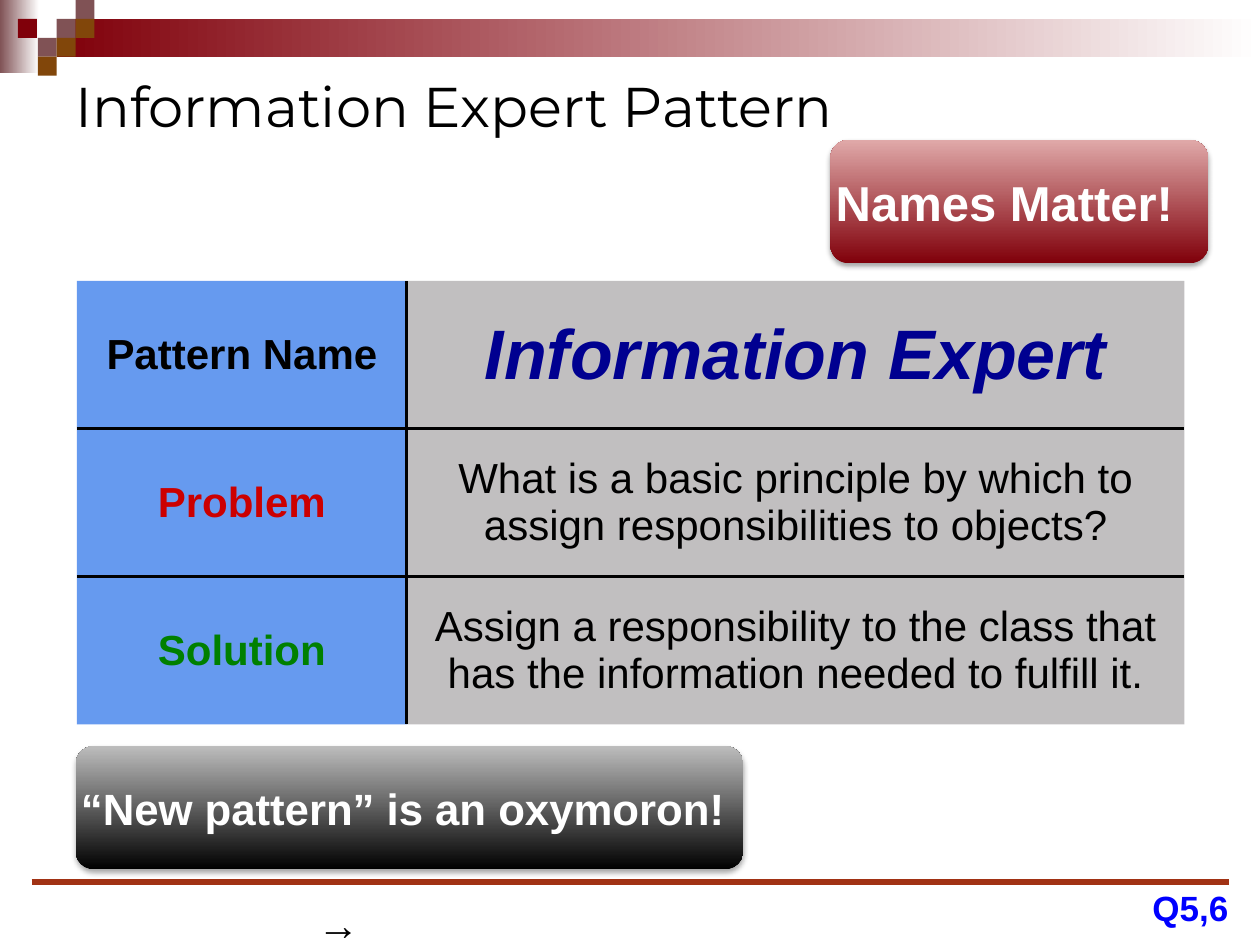
import pptx
import pptx.util
import pptx.dml.color
import pptx.enum.shapes
import pptx.enum.text
import pptx.oxml
import pptx.oxml.ns

ANCHOR = pptx.enum.text.MSO_ANCHOR
ALIGN = pptx.enum.text.PP_ALIGN
SHAPE = pptx.enum.shapes.MSO_SHAPE
NO_STYLE = "{2D5ABB26-0587-4C30-8999-92F81FD0307C}"
MAROON, MAUVE, BROWN = "80000A", "805255", "81460A"


def rgb(value):
    return pptx.dml.color.RGBColor.from_string(value)


def element(markup):
    head, tail = markup.split(">", 1)
    closing = "/" if head.endswith("/") else ""
    names = pptx.oxml.ns.nsdecls("a")
    return pptx.oxml.parse_xml(f"{head.rstrip('/')} {names}{closing}>{tail}")


class Page:
    columns, rows = 100, 75
    font = "Arial"

    def __init__(self, deck):
        self.deck = deck
        self.slide = deck.slides.add_slide(deck.slide_layouts[6])
        self.shapes = self.slide.shapes

    def place(self, left, top, width, height):
        across = self.deck.slide_width / self.columns
        down = self.deck.slide_height / self.rows
        return [pptx.util.Emu(round(value)) for value in
                (left * across, top * down, width * across, height * down)]

    def letter(self, frame, text, size, color="000000", bold=False, italic=False,
               align=ALIGN.LEFT, font=None):
        para = frame.paragraphs[0]
        para.text = text
        para.alignment = align
        para.font.name = font or self.font
        para.font.size = pptx.util.Pt(size)
        para.font.bold = bold
        para.font.italic = italic
        para.font.color.rgb = rgb(color)

    def block(self, area, *colors, angle=0, kind=SHAPE.RECTANGLE):
        box = self.shapes.add_shape(kind, *self.place(*area))
        box.shadow.inherit = False
        box.line.fill.background()
        if len(colors) == 1:
            box.fill.solid()
            box.fill.fore_color.rgb = rgb(colors[0])
        else:
            box.fill.gradient()
            box.fill.gradient_angle = angle
            for position, (stop, color) in enumerate(zip(box.fill.gradient_stops, colors)):
                stop.position = position
                stop.color.rgb = rgb(color)
        return box

    def callout(self, area, text, size, dark, light):
        box = self.block(area, dark, light, angle=90, kind=SHAPE.ROUNDED_RECTANGLE)
        box.adjustments[0] = 0.15
        box._element.spPr.find(pptx.oxml.ns.qn("a:effectLst")).append(element(
            f'<a:outerShdw blurRad="{pptx.util.Pt(3.1)}" dist="{pptx.util.Pt(1.8)}" '
            'dir="5400000" rotWithShape="0"><a:srgbClr val="000000">'
            '<a:alpha val="35000"/></a:srgbClr></a:outerShdw>'))
        self.fit(box.text_frame, 0, 0)
        self.letter(box.text_frame, text, size, "FFFFFF", bold=True)

    def fit(self, frame, side, edge, wrap=True):
        frame.word_wrap = wrap
        frame.margin_left = frame.margin_right = pptx.util.Inches(side)
        frame.margin_top = frame.margin_bottom = pptx.util.Inches(edge)
        frame.vertical_anchor = ANCHOR.MIDDLE

    def text(self, area, text, size, side=0.1, edge=0.05, wrap=True, **style):
        box = self.shapes.add_textbox(*self.place(*area))
        self.fit(box.text_frame, side, edge, wrap)
        self.letter(box.text_frame, text, size, **style)

    def rule(self, left, right, row, color, weight):
        x, y, width, _ = self.place(left, row, right - left, 0)
        line = self.shapes.add_connector(
            pptx.enum.shapes.MSO_CONNECTOR.STRAIGHT, x, y, x + width, y)
        line.line.color.rgb = rgb(color)
        line.line.width = pptx.util.Pt(weight)
        line._element.spPr.append(element("<a:effectLst/>"))

    def table(self, area, widths, fills, entries):
        frame = self.shapes.add_table(len(entries), len(widths), *self.place(*area))
        table = frame.table
        table.first_row = table.horz_banding = False
        table._tbl.tblPr.find(pptx.oxml.ns.qn("a:tableStyleId")).text = NO_STYLE
        for column, width in zip(table.columns, widths):
            column.width = self.place(0, 0, width, 0)[2]
        for row, entry in enumerate(entries):
            for column, (text, size, style) in enumerate(entry):
                cell = table.cell(row, column)
                self.letter(cell.text_frame, text, size, align=ALIGN.CENTER, **style)
                cell.vertical_anchor = ANCHOR.MIDDLE
                cell.margin_left = cell.margin_right = pptx.util.Inches(0.04)
                cell.margin_top = cell.margin_bottom = pptx.util.Inches(0.04)
                color, opacity = fills[column]
                cell.fill.solid()
                cell.fill.fore_color.rgb = rgb(color)
                properties = cell._tc.tcPr
                tint = properties.find(".//" + pptx.oxml.ns.qn("a:srgbClr"))
                tint.append(element(f'<a:alpha val="{opacity * 1000}"/>'))
                inner = {"L": column > 0, "R": column < len(widths) - 1,
                         "T": row > 0, "B": row < len(entries) - 1}
                sides = [side for side, shown in inner.items() if shown]
                for index, side in enumerate(sides):
                    properties.insert(index, element(
                        f'<a:ln{side} w="{pptx.util.Pt(2)}"><a:solidFill>'
                        f'<a:srgbClr val="000000"/></a:solidFill></a:ln{side}>'))


def main():
    deck = pptx.Presentation()
    deck.slide_width = pptx.util.Inches(10)
    deck.slide_height = pptx.util.Inches(7.5)
    page = Page(deck)

    page.block((0, 0, 3.1, 5.8), MAUVE, "FFFFFF")
    page.block((4.5, 1.5, 95.5, 3), MAROON, "FFFFFF")
    tile = 1.5
    mosaic = [(3, 1, MAUVE), (4, 0, MAUVE), (4, 1, BROWN), (2, 2, MAUVE),
              (0.95, 1, MAROON), (3, 2, BROWN), (2, 3, BROWN)]
    for column, row, color in mosaic:
        page.block((column * tile, row * tile, tile, tile), color)
    page.rule(2.5, 97.5, 70, "A13214", 3)

    page.text((5, 5, 90, 6.7), "Information Expert Pattern", 32, font="Montserrat")
    page.table((6.1, 22.3, 87.9, 35.2), (26.2, 61.7), (("0057E5", 60), ("544E51", 36)), [
        [("Pattern Name", 24, {"bold": True}),
         ("Information Expert", 40, {"bold": True, "italic": True, "color": "000090"})],
        [("Problem", 24, {"bold": True, "color": "CC0000"}),
         ("What is a basic principle by which to assign responsibilities to objects?", 24, {})],
        [("Solution", 24, {"bold": True, "color": "008000"}),
         ("Assign a responsibility to the class that has the information needed "
          "to fulfill it.", 24, {})],
    ])
    page.callout((65.9, 11.1, 30, 9.8), "Names Matter!", 28, MAROON, "E0A9A9")
    page.callout((6, 59.2, 53, 9.8), "“New pattern” is an oxymoron!", 25, "000000", "BDBDBD")
    page.text((91.4, 70.3, 6.1, 3.4), "Q5,6", 20, side=0, edge=0, wrap=False,
              color="0000FF", bold=True, align=ALIGN.RIGHT)
    page.text((24.2, 70.8, 5.3, 5), "→", 24, wrap=False)

    deck.save("out.pptx")


if __name__ == "__main__":
    main()
